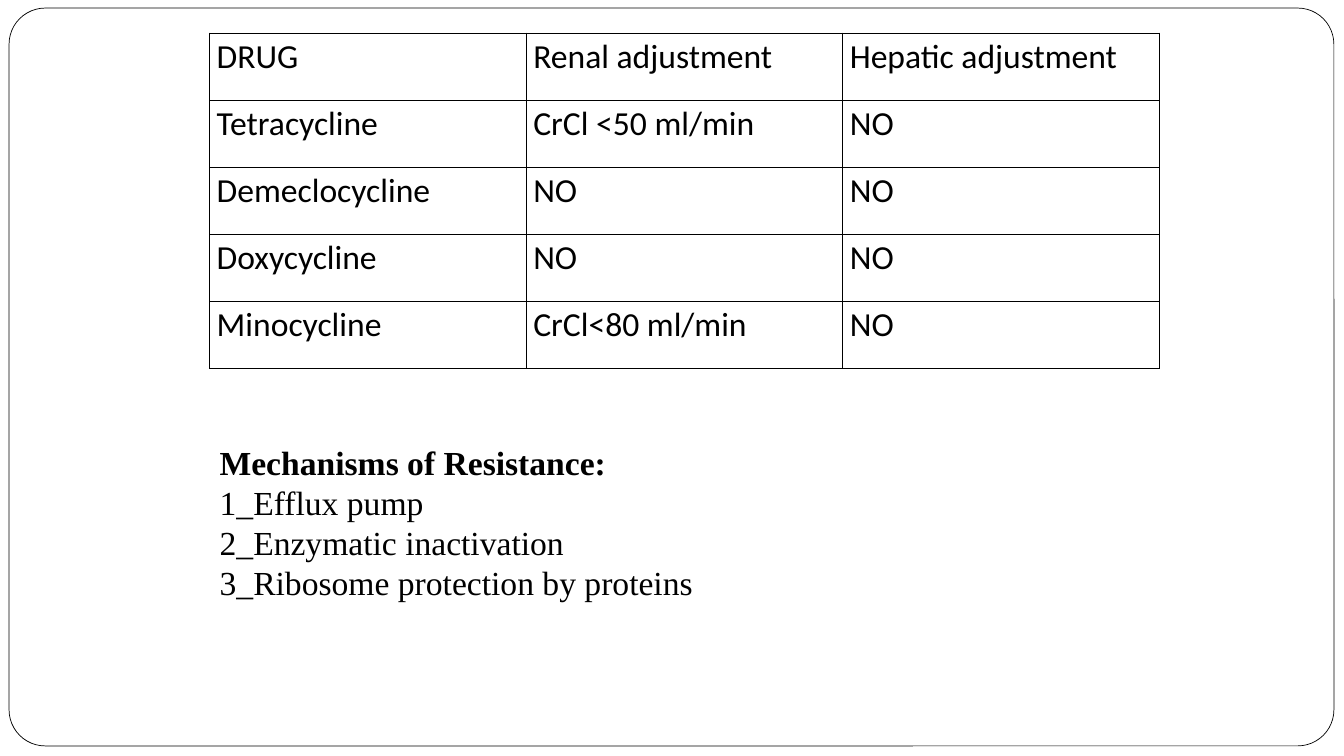
from lxml import etree
from pptx import Presentation
from pptx import util as u
from pptx.dml.color import RGBColor
from pptx.enum import shapes, text
from pptx.oxml import ns

PX = 9144  # EMU per px, 100 px to the inch
BLACK, WHITE = "000000", "FFFFFF"

DOSE_ROWS = [
    ("DRUG", "Renal adjustment", "Hepatic adjustment"),
    ("Tetracycline", "CrCl <50 ml/min", "NO"),
    ("Demeclocycline", "NO", "NO"),
    ("Doxycycline", "NO", "NO"),
    ("Minocycline", "CrCl<80 ml/min", "NO"),
]
RESISTANCE_TITLE = "Mechanisms of Resistance:"
MECHANISMS = [
    "1_Efflux pump",
    "2_Enzymatic inactivation",
    "3_Ribosome protection by proteins",
]


def px(*lengths):
    return [u.Emu(length * PX) for length in lengths]


def color(hex_value):
    return RGBColor.from_string(hex_value)


def write(para, content, font, size=24, bold=False, spacing=None):
    span = para.add_run()
    span.text = content
    span.font.name = font
    span.font.size = u.Pt(size)
    span.font.bold = bold
    span.font.color.rgb = color(BLACK)
    para.alignment = text.PP_ALIGN.LEFT
    if spacing:
        para.line_spacing = spacing


def add_frame(page, left, top, width, height):
    box = page.shapes.add_shape(
        shapes.MSO_SHAPE.ROUNDED_RECTANGLE, *px(left, top, width, height))
    box.adjustments[0] = 0.049
    box.shadow.inherit = False
    box.fill.solid()
    box.fill.fore_color.rgb = color(WHITE)
    box.line.color.rgb = color(BLACK)
    box.line.width = u.Pt(0.5)


def add_borders(cell, width=1):
    """Draw a solid line on all four sides; call before setting the fill."""
    properties = cell._tc.get_or_add_tcPr()
    for side in ("lnL", "lnR", "lnT", "lnB"):
        line = etree.SubElement(properties, ns.qn(f"a:{side}"), w=str(u.Pt(width)))
        fill = etree.SubElement(line, ns.qn("a:solidFill"))
        etree.SubElement(fill, ns.qn("a:srgbClr"), val=BLACK)


def add_dose_table(page, rows, left, top, width, height):
    table = page.shapes.add_table(
        len(rows), len(rows[0]), *px(left, top, width, height)).table
    table.first_row = table.horz_banding = False
    for row, values in zip(table.rows, rows):
        for cell, value in zip(row.cells, values):
            cell.margin_left, cell.margin_right = px(7, 7)
            cell.margin_top = cell.margin_bottom = 0
            add_borders(cell)
            cell.fill.background()
            write(cell.text_frame.paragraphs[0], value, "Calibri", spacing=1.07)


def add_list(page, title, items, left, top, width, height):
    box = page.shapes.add_textbox(*px(left, top, width, height))
    frame = box.text_frame
    frame.word_wrap = True
    frame.auto_size = text.MSO_AUTO_SIZE.SHAPE_TO_FIT_TEXT
    write(frame.paragraphs[0], title, "Times New Roman", bold=True)
    for item in items:
        write(frame.add_paragraph(), item, "Times New Roman")


def main():
    deck = Presentation()
    deck.slide_width, deck.slide_height = px(1333, 750)
    page = deck.slides.add_slide(deck.slide_layouts[6])
    add_frame(page, 9, 8, 1314, 732)
    add_dose_table(page, DOSE_ROWS, 208, 33, 942, 333)
    add_list(page, RESISTANCE_TITLE, MECHANISMS, 208, 433, 858, 172)
    deck.save("out.pptx")


if __name__ == "__main__":
    main()
